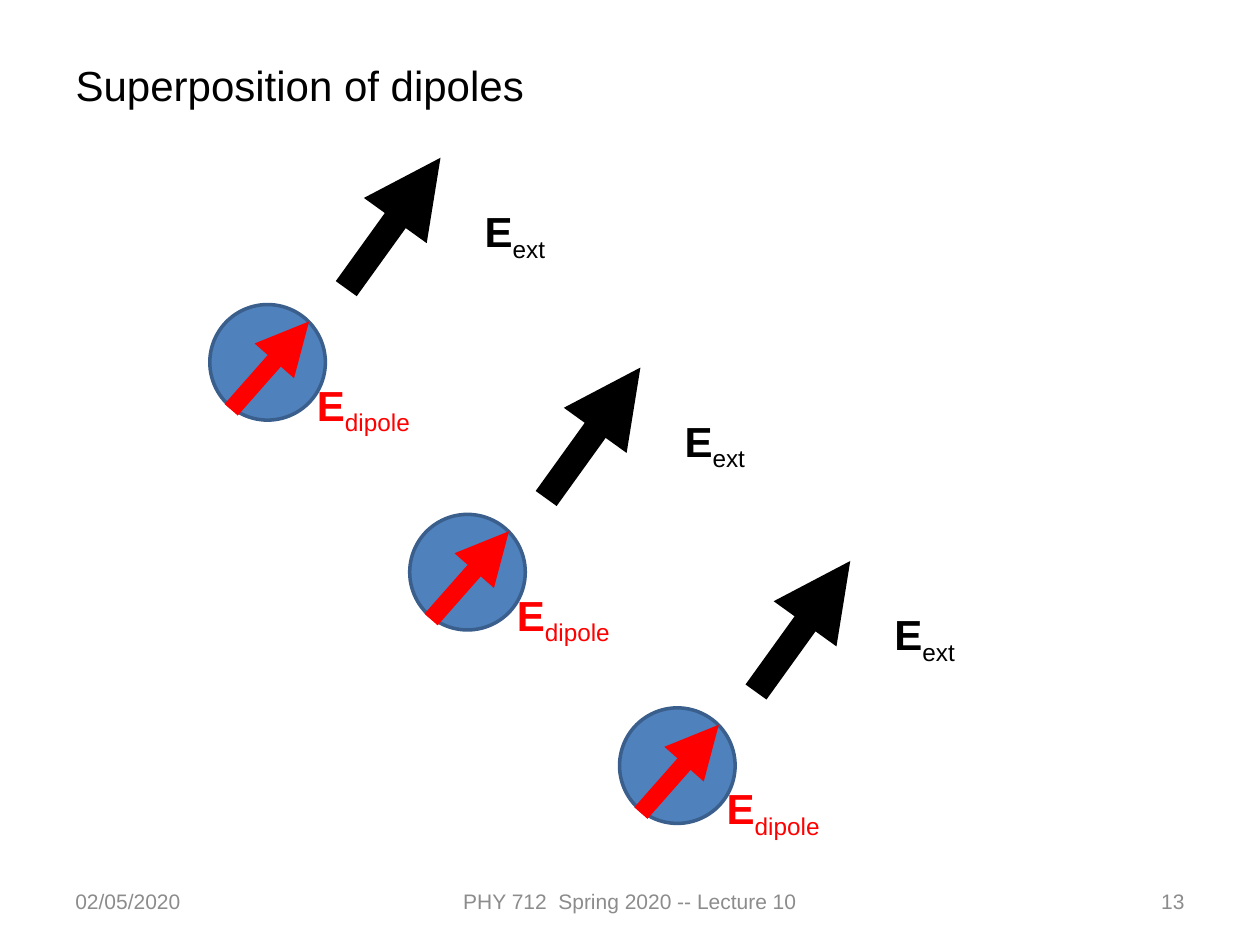
import dataclasses

import pptx
import pptx.dml.color
import pptx.enum.shapes
import pptx.enum.text
import pptx.oxml.ns
import pptx.util
from lxml import etree
from pptx.util import Cm


@dataclasses.dataclass(frozen=True)
class Theme:
    font: str = "Arial"
    ink: str = "000000"
    dipole: str = "FF0000"
    sphere: str = "4F81BD"
    sphere_edge: str = "3A5F8C"
    footer: str = "8C8C8C"
    text_size: int = 24
    footer_size: int = 12


theme = Theme()
ALIGN = pptx.enum.text.PP_ALIGN
ANCHOR = pptx.enum.text.MSO_ANCHOR


def write_text(holder, parts, size, color, align=ALIGN.LEFT, anchor=ANCHOR.TOP):
    frame = holder.text_frame
    frame.word_wrap = True
    frame.auto_size = pptx.enum.text.MSO_AUTO_SIZE.NONE
    frame.vertical_anchor = anchor
    paragraph = frame.paragraphs[0]
    paragraph.alignment = align
    paragraph.font.name = theme.font
    paragraph.font.size = pptx.util.Pt(size)
    paragraph.font.color.rgb = pptx.dml.color.RGBColor.from_string(color)
    for part in parts:
        paragraph.add_run().text = part
    return paragraph


def add_arrow(shapes, start, end, color, width):
    arrow = shapes.add_connector(
        pptx.enum.shapes.MSO_CONNECTOR.STRAIGHT,
        Cm(start[0]), Cm(start[1]), Cm(end[0]), Cm(end[1]))
    arrow.line.color.rgb = pptx.dml.color.RGBColor.from_string(color)
    arrow.line.width = pptx.util.Pt(width)
    qn = pptx.oxml.ns.qn
    properties = arrow.line._get_or_add_ln()
    etree.SubElement(properties, qn("a:tailEnd"), type="triangle")
    etree.SubElement(properties.getparent(), qn("a:effectLst"))


presentation = pptx.Presentation()
presentation.slide_width = Cm(25.4)
presentation.slide_height = Cm(19.05)
slide = presentation.slides.add_slide(presentation.slide_layouts[5])
shapes = slide.shapes

heading = shapes.title
heading.left, heading.top = Cm(1.27), Cm(1.07)
heading.width, heading.height = Cm(19.05), Cm(1.27)
write_text(heading, ["Superposition of dipoles"], theme.text_size, theme.ink)

for left, width, wording, align in (
    (1.27, 5.93, "02/05/2020", ALIGN.LEFT),
    (8.68, 8.04, "PHY 712  Spring 2020 -- Lecture 10", ALIGN.CENTER),
    (18.2, 5.93, "13", ALIGN.RIGHT),
):
    footer = shapes.add_textbox(Cm(left), Cm(17.66), Cm(width), Cm(1.01))
    write_text(footer, [wording], theme.footer_size, theme.footer, align, ANCHOR.MIDDLE)

for x, y in ((4.23, 6.14), (8.26, 10.37), (12.49, 14.27)):
    sphere = shapes.add_shape(
        pptx.enum.shapes.MSO_SHAPE.OVAL, Cm(x), Cm(y), Cm(2.33), Cm(2.33))
    sphere.shadow.inherit = False
    sphere.fill.solid()
    sphere.fill.fore_color.rgb = pptx.dml.color.RGBColor.from_string(theme.sphere)
    sphere.line.color.rgb = pptx.dml.color.RGBColor.from_string(theme.sphere_edge)
    sphere.line.width = pptx.util.Pt(2)

    add_arrow(shapes, (x + 2.75, y - 0.32), (x + 4.65, y - 2.96), theme.ink, 14.75)
    add_arrow(shapes, (x + 0.43, y + 2.12), (x + 2, y + 0.34), theme.dipole, 10)

    for dx, dy, subscript, color in (
        (5.29, -2.12, "ext", theme.ink),
        (1.91, 1.38, "dipole", theme.dipole),
    ):
        label = shapes.add_textbox(Cm(x + dx), Cm(y + dy), Cm(2.75), Cm(1.27))
        field = write_text(label, ["E", subscript], theme.text_size, color)
        field.runs[0].font.bold = True
        field.runs[1].font._element.set("baseline", "-25000")

presentation.save("out.pptx")
